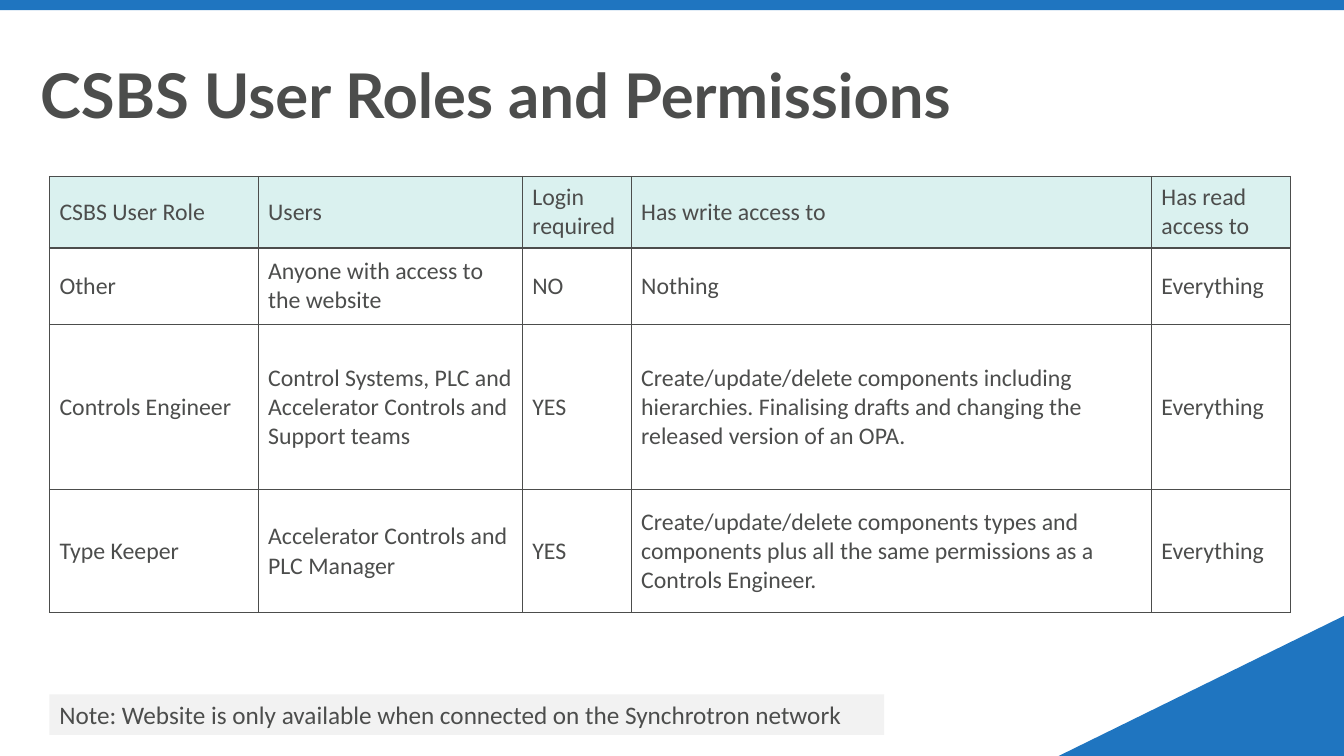
from dataclasses import dataclass

from lxml import etree
from pptx import Presentation
from pptx.dml.color import RGBColor
from pptx.enum.shapes import MSO_SHAPE
from pptx.enum.text import MSO_ANCHOR, PP_ALIGN
from pptx.oxml.ns import qn
from pptx.util import Inches, Pt

RECTANGLE, RIGHT_TRIANGLE = MSO_SHAPE.RECTANGLE, MSO_SHAPE.RIGHT_TRIANGLE
MIDDLE, BOTTOM = MSO_ANCHOR.MIDDLE, MSO_ANCHOR.BOTTOM
LEFT = PP_ALIGN.LEFT


@dataclass(frozen=True)
class Theme:
    ink: str = "4C4D4C"
    blue: str = "1F75C0"
    header: str = "DAF1EF"
    note: str = "F2F2F2"
    title_font: str = "Lato"
    body_font: str = "Calibri"
    title_size: int = 44
    table_size: int = 17
    note_size: int = 18
    border: int = 1


THEME = Theme()
SLIDE_W, SLIDE_H = 13.33, 7.5
COLUMNS = [2.07, 2.62, 1.08, 5.16, 1.38]
ROWS = [0.71, 0.76, 1.64, 1.22]
ROLES = [
    ["CSBS User Role", "Users", "Login required", "Has write access to",
     "Has read access to"],
    ["Other", "Anyone with access to the website", "NO", "Nothing", "Everything"],
    ["Controls Engineer",
     "Control Systems, PLC and Accelerator Controls and Support teams", "YES",
     "Create/update/delete components including hierarchies. Finalising drafts "
     "and changing the released version of an OPA.", "Everything"],
    ["Type Keeper", "Accelerator Controls and PLC Manager", "YES",
     "Create/update/delete components types and components plus all the same "
     "permissions as a Controls Engineer.", "Everything"],
]


def write(frame, text, font, size, bold=False):
    """Put one left-aligned run in the frame's first paragraph."""
    frame.word_wrap = True
    paragraph = frame.paragraphs[0]
    paragraph.alignment = LEFT
    run = paragraph.add_run()
    run.text = text
    run.font.name = font
    run.font.size = Pt(size)
    run.font.bold = bold
    run.font.color.rgb = RGBColor.from_string(THEME.ink)
    return paragraph


def add_block(slide, kind, box, color):
    block = slide.shapes.add_shape(kind, *map(Inches, box))
    block.shadow.inherit = False
    block.fill.solid()
    block.fill.fore_color.rgb = RGBColor.from_string(color)
    block.line.fill.background()
    return block


def add_border(cell):
    properties = cell._tc.get_or_add_tcPr()
    for position, side in enumerate(("a:lnL", "a:lnR", "a:lnT", "a:lnB")):
        line = etree.Element(qn(side), w=str(Pt(THEME.border)))
        fill = etree.SubElement(line, qn("a:solidFill"))
        etree.SubElement(fill, qn("a:srgbClr"), val=THEME.ink)
        properties.insert(position, line)


def add_decoration(slide, width, height):
    # Corner triangle, with its right angle at the bottom right
    corner_w, corner_h = 2.83, 1.39
    corner = add_block(slide, RIGHT_TRIANGLE,
                       (width - corner_w, height - corner_h, corner_w, corner_h),
                       THEME.blue)
    corner._element.spPr.find(qn("a:xfrm")).set("flipH", "1")
    # Top band
    add_block(slide, RECTANGLE, (0, 0, width, 0.1), THEME.blue)


def add_title(slide, box):
    title = slide.shapes.add_textbox(*map(Inches, box)).text_frame
    title.vertical_anchor = BOTTOM
    heading = write(title, "CSBS User Roles and Permissions",
                    THEME.title_font, THEME.title_size, bold=True)
    heading.line_spacing = 0.9


def add_roles_table(slide, left, top):
    box = (left, top, sum(COLUMNS), sum(ROWS))
    table = slide.shapes.add_table(len(ROWS), len(COLUMNS),
                                   *map(Inches, box)).table
    table.first_row = table.horz_banding = False
    for column, width in zip(table.columns, COLUMNS):
        column.width = Inches(width)
    for r, (height, texts) in enumerate(zip(ROWS, ROLES)):
        table.rows[r].height = Inches(height)
        for c, text in enumerate(texts):
            cell = table.cell(r, c)
            cell.vertical_anchor = MIDDLE
            if r == 0:
                cell.fill.solid()
                cell.fill.fore_color.rgb = RGBColor.from_string(THEME.header)
            else:
                cell.fill.background()
            add_border(cell)
            write(cell.text_frame, text, THEME.body_font, THEME.table_size)


def add_note(slide, box):
    note = add_block(slide, RECTANGLE, box, THEME.note)
    write(note.text_frame,
          "Note: Website is only available when connected on the Synchrotron network",
          THEME.body_font, THEME.note_size)


def main():
    deck = Presentation()
    deck.slide_width, deck.slide_height = Inches(SLIDE_W), Inches(SLIDE_H)
    slide = deck.slides.add_slide(deck.slide_layouts[6])
    add_decoration(slide, SLIDE_W, SLIDE_H)
    add_title(slide, (0.3, 0.11, 12.36, 1.25))
    add_roles_table(slide, 0.49, 1.75)
    add_note(slide, (0.49, 6.89, 8.28, 0.4))
    deck.save("out.pptx")


if __name__ == "__main__":
    main()
